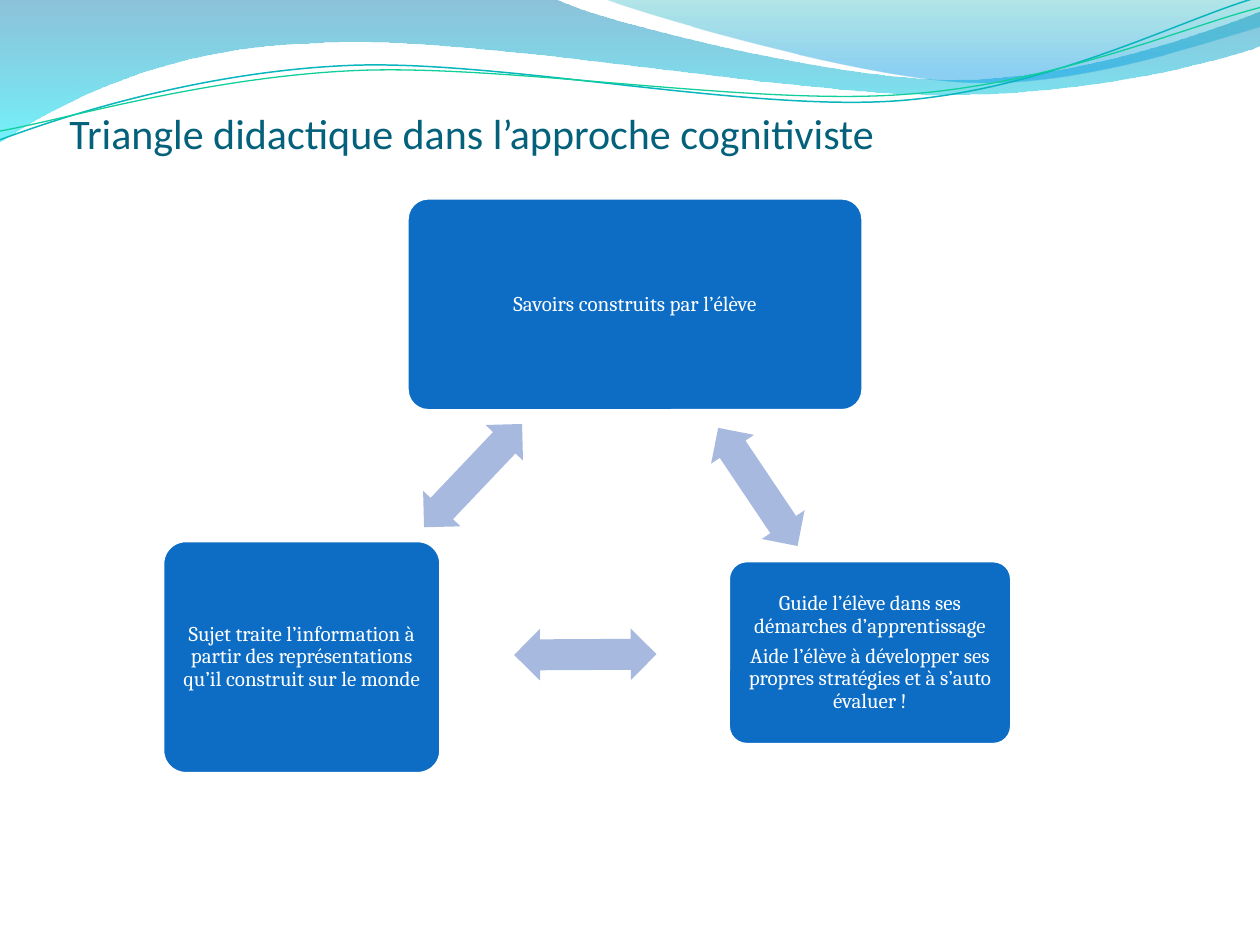
"""Build a slide showing the didactic triangle in the cognitivist approach."""
from pptx import Presentation
from pptx.dml.color import RGBColor
from pptx.enum.shapes import MSO_SHAPE
from pptx.enum.text import MSO_ANCHOR, PP_ALIGN
from pptx.oxml import parse_xml
from pptx.oxml.ns import nsdecls, qn
from pptx.util import Inches, Pt

ROUNDED = MSO_SHAPE.ROUNDED_RECTANGLE
DOUBLE_ARROW = MSO_SHAPE.LEFT_RIGHT_ARROW
MIDDLE, BOTTOM = MSO_ANCHOR.MIDDLE, MSO_ANCHOR.BOTTOM
CENTER, LEFT = PP_ALIGN.CENTER, PP_ALIGN.LEFT

COLORS = {
    "title": "04617B", "box": "0D6DC5", "arrow": "A7B9DF", "white": "FFFFFF",
    "deep": "0079AD", "aqua": "00E9F7", "teal": "00ABB4", "sky": "0099E4",
    "teal line": "09B6BE", "green line": "10CF9B",
}
COLUMNS, ROWS = 10, 7.5
UNIT = Inches(1)

TITLE = ("Triangle didactique dans l’approche cognitiviste", (0.55, 0, 9, 1.25))
BOXES = [
    (["Savoirs construits par l’élève"], (3.23, 1.57, 3.62, 1.69)),
    (["Guide l’élève dans ses démarches d’apprentissage",
      "Aide l’élève à développer ses propres stratégies et à s’auto évaluer !"],
     (5.78, 4.45, 2.25, 1.46)),
    (["Sujet traite l’information à partir des représentations qu’il construit sur le monde"],
     (1.29, 4.29, 2.21, 1.85)),
]
ARROW_SIZE = (1.13, 0.41)
ARROWS = [((5.45, 3.66), 56.1), ((4.08, 4.99), 179.7), ((3.19, 3.57), 313.5)]

WAVES = [
    ((0, 0), [(4.4, -0.01), (4.76, 0.17, 6.64, 0.63, 7.58, 0.63),
              (8.53, 0.63, 9.58, 0.26, 10, 0.09), (10.01, 0.36),
              (9.83, 0.44, 8.7, 0.76, 7.46, 0.75), (6.22, 0.75, 3.82, 0.28, 2.57, 0.34),
              (1.29, 0.36, 0.46, 0.83, -0.01, 1.13)],
     [(0, "deep", 45), (100, "aqua", 55)]),
    ((4.79, -0.01), [(5.09, 0.11, 6.82, 0.62, 7.69, 0.65),
                     (8.56, 0.69, 9.61, 0.32, 10, 0.21), (10, 0)],
     [(0, "teal", 30), (80, "sky", 45), (100, "sky", 45)]),
]
STRANDS = [
    ((0, 1.11), [(0.48, 0.93, 1.58, 0.57, 2.77, 0.52), (3.95, 0.47, 5.93, 0.89, 7.13, 0.8),
                 (8.33, 0.71, 9.38, 0.15, 9.98, -0.02)], "teal line", 0.85),
    ((0, 1.04), [(0.47, 0.96, 1.64, 0.61, 2.83, 0.56), (4.03, 0.51, 5.97, 0.84, 7.17, 0.75),
                 (8.36, 0.67, 9.41, 0.21, 10, 0.06)], "green line", 0.75),
]


def color(name):
    return RGBColor.from_string(COLORS[name])


def place(cells):
    return [round(value * UNIT) for value in cells]


def add_outline(slide, start, segments, close):
    builder = slide.shapes.build_freeform(*place(start))
    for segment in segments:
        values = place(segment)
        builder.add_line_segments(list(zip(values[::2], values[1::2])), close=False)
    if close:
        builder.add_line_segments([], close=True)
    shape = builder.convert_to_shape()
    shape.shadow.inherit = False
    shape.fill.background()

    geometry = next(shape.element.iter(qn("a:path")))
    lines = iter(geometry.findall(qn("a:lnTo")))
    for segment in segments:
        group = [next(lines) for _ in segment[::2]]
        if len(group) == 3:
            curve = parse_xml(f'<a:cubicBezTo {nsdecls("a")}/>')
            group[0].addprevious(curve)
            for line in group:
                curve.append(line[0])
                geometry.remove(line)
    return shape


def add_wave(slide, start, segments, stops):
    shape = add_outline(slide, start, segments, True)
    shape.line.fill.background()
    gradient = parse_xml(f'<a:gradFill {nsdecls("a")}><a:gsLst/><a:lin ang="5400000"/></a:gradFill>')
    for position, name, opacity in stops:
        gradient[0].append(parse_xml(
            f'<a:gs {nsdecls("a")} pos="{position * 1000}"><a:srgbClr val="{COLORS[name]}">'
            f'<a:alpha val="{opacity * 1000}"/></a:srgbClr></a:gs>'))
    properties = shape.element.spPr
    properties.replace(properties.find(qn("a:noFill")), gradient)


def add_strand(slide, start, segments, name, width):
    shape = add_outline(slide, start, segments, False)
    shape.line.color.rgb = color(name)
    shape.line.width = Pt(width)


def add_preset(slide, preset, cells, fill, adjustments):
    shape = slide.shapes.add_shape(preset, *place(cells))
    shape.shadow.inherit = False
    shape.fill.solid()
    shape.fill.fore_color.rgb = color(fill)
    for index, value in enumerate(adjustments):
        shape.adjustments[index] = value
    return shape


def write(shape, texts, margins, anchor, alignment, font, size, name):
    frame = shape.text_frame
    frame.word_wrap = True
    frame.vertical_anchor = anchor
    frame.margin_left, frame.margin_top, frame.margin_right, frame.margin_bottom = place(margins)
    for index, text in enumerate(texts):
        paragraph = frame.add_paragraph() if index else frame.paragraphs[0]
        paragraph.text = text
        paragraph.alignment = alignment
        paragraph.font.name = font
        paragraph.font.size = Pt(size)
        paragraph.font.color.rgb = color(name)
        if anchor == MIDDLE:
            paragraph.line_spacing = 0.9
        if index:
            paragraph.space_before = Pt(4.2)


def main():
    presentation = Presentation()
    presentation.slide_width, presentation.slide_height = place((COLUMNS, ROWS))
    slide = presentation.slides.add_slide(presentation.slide_layouts[6])
    for wave in WAVES:
        add_wave(slide, *wave)
    for strand in STRANDS:
        add_strand(slide, *strand)

    title, cells = TITLE
    write(slide.shapes.add_textbox(*place(cells)), [title], (0, 0.05, 0, 0),
          BOTTOM, LEFT, "Calibri", 24, "title")
    for texts, cells in BOXES:
        box = add_preset(slide, ROUNDED, cells, "box", [0.1])
        box.line.color.rgb = color("white")
        box.line.width = Pt(2)
        write(box, texts, (0.05,) * 4, MIDDLE, CENTER, "Cambria", 12, "white")
    for corner, rotation in ARROWS:
        arrow = add_preset(slide, DOUBLE_ARROW, corner + ARROW_SIZE, "arrow", [0.6, 0.5])
        arrow.line.fill.background()
        arrow.rotation = rotation
    presentation.save("out.pptx")


if __name__ == "__main__":
    main()
